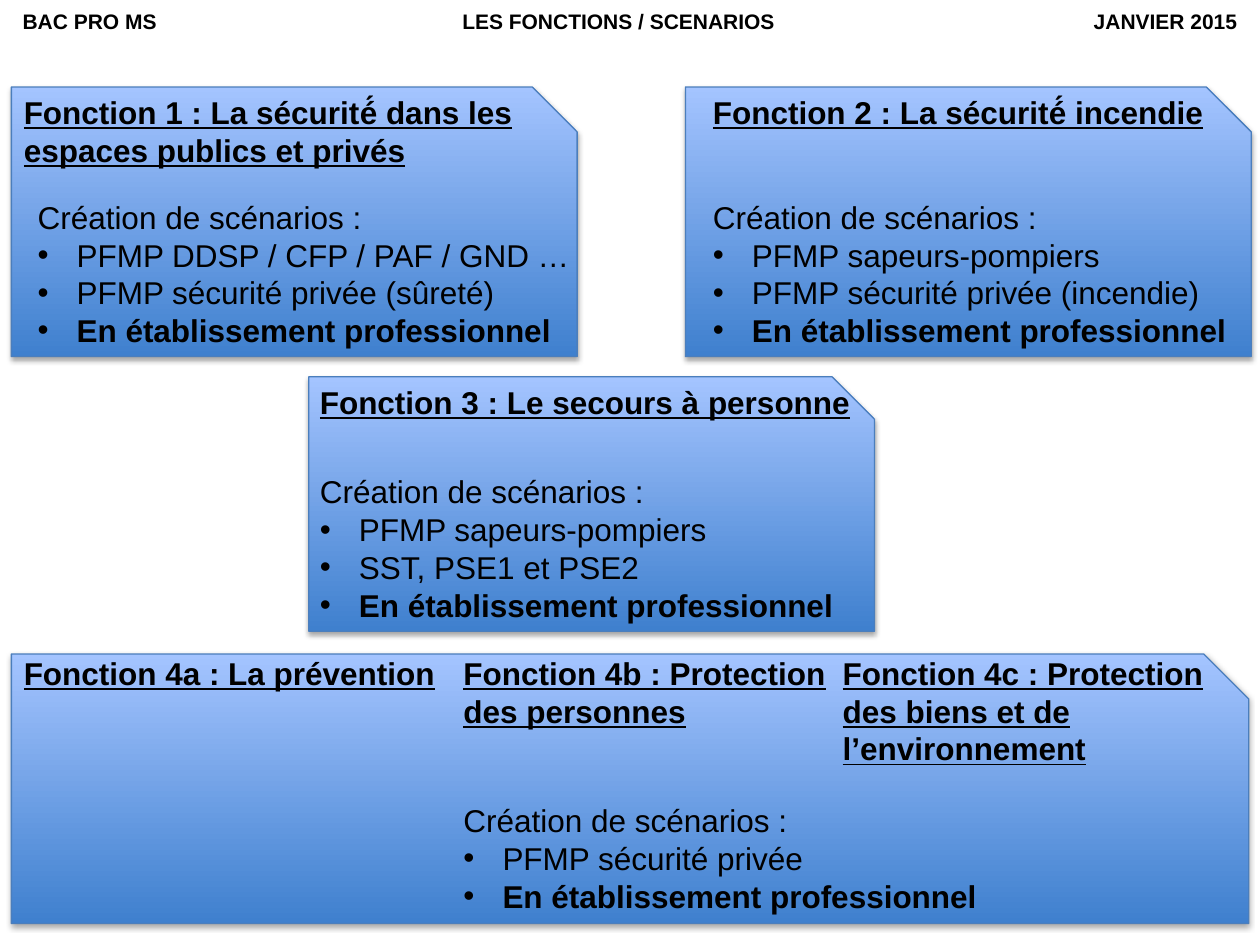
import pptx
import pptx.dml.color
import pptx.enum.shapes
import pptx.enum.text
import pptx.oxml
import pptx.oxml.ns
import pptx.util
from pptx.util import Inches

COLOURS = {"text": "000000", "bottom": "3F80CE", "top": "A4C4FF",
           "outline": "4B7EBC", "shadow": "000000"}
NAMESPACE = pptx.oxml.ns.nsdecls("a")
INDENT = Inches(0.31)
CLOSING_ITEM = "En établissement professionnel"


def rgb(name):
    return pptx.dml.color.RGBColor.from_string(COLOURS[name])


def add_text(shapes, text, at, size=18, bold=False, underline=False,
             bold_last=False, bullets=False, inset=0.1, tabs=()):
    """Add a text box; each line of text is a paragraph, bulleted after the first."""
    box = shapes.add_textbox(*[Inches(length) for length in at])
    frame = box.text_frame
    frame.word_wrap = True
    frame.auto_size = pptx.enum.text.MSO_AUTO_SIZE.SHAPE_TO_FIT_TEXT
    frame.margin_left = Inches(inset)
    lines = text.split("\n")
    for number, line in enumerate(lines):
        para = frame.add_paragraph() if number else frame.paragraphs[0]
        span = para.add_run()
        span.text = line
        span.font.name = "Arial"
        span.font.size = pptx.util.Pt(size)
        span.font.bold = bold or (bold_last and number == len(lines) - 1)
        span.font.underline = underline
        span.font.color.rgb = rgb("text")
        properties = para._p.get_or_add_pPr()
        if bullets and number:
            properties.set("marL", str(INDENT))
            properties.set("indent", str(-INDENT))
            properties.append(pptx.oxml.parse_xml(
                f'<a:buFont {NAMESPACE} typeface="Arial"/>'))
            properties.append(pptx.oxml.parse_xml(
                f'<a:buChar {NAMESPACE} char="•"/>'))
        if tabs:
            stops = "".join(f'<a:tab pos="{Inches(place)}" algn="{align}"/>'
                            for place, align in tabs)
            properties.append(pptx.oxml.parse_xml(
                f"<a:tabLst {NAMESPACE}>{stops}</a:tabLst>"))


deck = pptx.Presentation()
deck.slide_width = Inches(10)
deck.slide_height = Inches(7.5)
page = deck.slides.add_slide(deck.slide_layouts[6])

# Header line: left, centred and right parts
add_text(page.shapes, "BAC PRO MS\tLES FONCTIONS / SCENARIOS\tJANVIER 2015",
         (0, 0.02, 10, 0.3), size=12, bold=True, inset=0.18,
         tabs=[(4.73, "ctr"), (9.64, "r")])

# Each card: bounds, titles with bounds, scenarios, bounds of the scenarios
cards = [
    ((0.09, 0.69, 4.49, 2.14),
     [("Fonction 1 : La sécurité́ dans les espaces publics et privés",
       (0.09, 0.69, 4.35, 0.71))],
     ["PFMP DDSP / CFP / PAF / GND …", "PFMP sécurité privée (sûreté)"],
     (0.2, 1.52, 4.6, 1.31)),
    ((5.44, 0.69, 4.49, 2.14),
     [("Fonction 2 : La sécurité́ incendie", (5.56, 0.69, 4.35, 0.4))],
     ["PFMP sapeurs-pompiers", "PFMP sécurité privée (incendie)"],
     (5.56, 1.52, 4.44, 1.31)),
    ((2.45, 2.99, 4.49, 2.02),
     [("Fonction 3 : Le secours à personne", (2.44, 2.99, 4.69, 0.4))],
     ["PFMP sapeurs-pompiers", "SST, PSE1 et PSE2"],
     (2.44, 3.7, 4.5, 1.31)),
    ((0.09, 5.19, 9.82, 2.14),
     [("Fonction 4a : La prévention", (0.09, 5.14, 3.49, 0.4)),
      ("Fonction 4b : Protection des personnes", (3.58, 5.14, 3.38, 0.71)),
      ("Fonction 4c : Protection des biens et de l’environnement",
       (6.59, 5.14, 3.17, 1.01))],
     ["PFMP sécurité privée"],
     (3.58, 6.31, 4.28, 1.01)),
]

for bounds, titles, scenarios, scenarios_at in cards:
    group = page.shapes.add_group_shape()

    # Panel with a cut corner, gradient and soft shadow
    panel = group.shapes.add_shape(
        pptx.enum.shapes.MSO_SHAPE.SNIP_1_RECTANGLE,
        *[Inches(length) for length in bounds])
    panel.fill.gradient()
    panel.fill.gradient_angle = 90
    for stop, place, name in zip(panel.fill.gradient_stops, (0, 1),
                                 ("bottom", "top")):
        stop.position = place
        stop.color.rgb = rgb(name)
    panel.line.color.rgb = rgb("outline")
    panel.line.width = pptx.util.Pt(0.75)
    panel.shadow.inherit = False
    effects = panel._element.spPr.find(pptx.oxml.ns.qn("a:effectLst"))
    effects.append(pptx.oxml.parse_xml(
        f'<a:outerShdw {NAMESPACE} blurRad="{pptx.util.Pt(3.1)}" '
        f'dist="{pptx.util.Pt(1.8)}" dir="5400000" rotWithShape="0">'
        f'<a:srgbClr val="{COLOURS["shadow"]}"><a:alpha val="35000"/>'
        '</a:srgbClr></a:outerShdw>'))

    # Titles and scenario list
    for title, title_at in titles:
        add_text(group.shapes, title, title_at, bold=True, underline=True)
    add_text(group.shapes,
             "\n".join(["Création de scénarios :", *scenarios, CLOSING_ITEM]),
             scenarios_at, bullets=True, bold_last=True)

deck.save("out.pptx")
